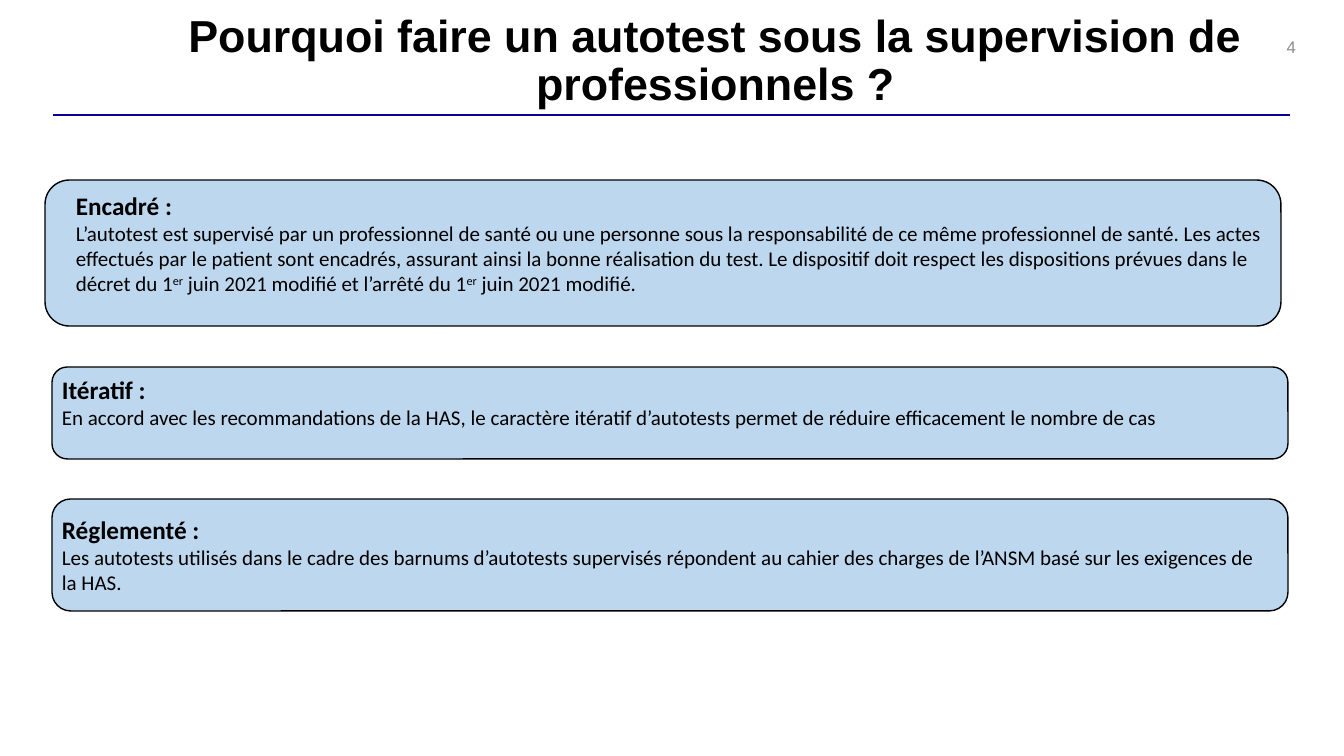
from dataclasses import dataclass

from lxml.etree import SubElement
from pptx import Presentation
from pptx.dml.color import RGBColor
from pptx.enum.shapes import MSO_CONNECTOR, MSO_SHAPE
from pptx.enum.text import MSO_ANCHOR, MSO_AUTO_SIZE, PP_ALIGN
from pptx.oxml.ns import qn
from pptx.util import Pt

EMU_PER_PX = 914400 / 100.8


@dataclass(frozen=True)
class Theme:
    ink: RGBColor = RGBColor(0x00, 0x00, 0x00)
    rule: RGBColor = RGBColor(0x0A, 0x00, 0x91)
    panel: RGBColor = RGBColor(0xBD, 0xD7, 0xEE)
    muted: RGBColor = RGBColor(0x8C, 0x8C, 0x8C)
    heading_font: str = "Arial"
    body_font: str = "Calibri"
    title_size: int = 32
    heading_size: int = 18
    body_size: int = 15
    number_size: int = 12


THEME = Theme()
TITLE = "Pourquoi faire un autotest sous la supervision de professionnels ?"
PANEL_WIDTH, STATEMENT_WIDTH = 1236, 1222

# Panel (left, top, height), statement (shift right, shift down, height), heading,
# and body pieces, which alternate between normal and superscript.
PANELS = [
    ((45, 180, 146), (21, 5, 117), "Encadré :", [
        "L’autotest est supervisé par un professionnel de santé ou une personne sous "
        "la responsabilité de ce même professionnel de santé. Les actes effectués par "
        "le patient sont encadrés, assurant ainsi la bonne réalisation du test. Le "
        "dispositif doit respect les dispositions prévues dans le décret du 1",
        "er", " juin 2021 modifié et l’arrêté du 1", "er", " juin 2021 modifié."]),
    ((52, 367, 92), (0, 2, 67), "Itératif :", [
        "En accord avec les recommandations de la HAS, le caractère itératif "
        "d’autotests permet de réduire efficacement le nombre de cas"]),
    ((52, 499, 112), (0, 10, 92), "Réglementé :", [
        "Les autotests utilisés dans le cadre des barnums d’autotests supervisés "
        "répondent au cahier des charges de l’ANSM basé sur les exigences de la HAS."]),
]


def px(*lengths):
    return [round(length * EMU_PER_PX) for length in lengths]


def apply_format(target, values):
    for name, value in values.items():
        setattr(target, name, value)


def add_run(paragraph, text, size, font=THEME.body_font, color=THEME.ink, bold=False):
    run = paragraph.add_run()
    run.text = text
    apply_format(run.font, {"size": Pt(size), "name": font, "bold": bold})
    run.font.color.rgb = color
    return run


def add_title(slide, box):
    title = slide.shapes.title
    apply_format(title, dict(zip(("left", "top", "width", "height"), px(*box))))
    apply_format(title.text_frame, {"vertical_anchor": MSO_ANCHOR.MIDDLE,
                                    "word_wrap": True,
                                    "auto_size": MSO_AUTO_SIZE.NONE})
    paragraph = title.text_frame.paragraphs[0]
    apply_format(paragraph, {"alignment": PP_ALIGN.CENTER, "line_spacing": 0.9})
    add_run(paragraph, TITLE, THEME.title_size, THEME.heading_font, bold=True)


def add_rule(slide, left, top, width):
    rule = slide.shapes.add_connector(
        MSO_CONNECTOR.STRAIGHT, *px(left, top, left + width, top))
    rule.line.color.rgb = THEME.rule
    rule.line.width = Pt(1.75)
    SubElement(rule._element.spPr, qn("a:effectLst"))


def add_page_number(slide, box, number):
    frame = slide.shapes.add_textbox(*px(*box)).text_frame
    apply_format(frame, {"word_wrap": True, "vertical_anchor": MSO_ANCHOR.MIDDLE})
    paragraph = frame.paragraphs[0]
    paragraph.alignment = PP_ALIGN.RIGHT
    add_run(paragraph, number, THEME.number_size, THEME.heading_font, THEME.muted)


def add_panel(slide, box):
    panel = slide.shapes.add_shape(MSO_SHAPE.ROUNDED_RECTANGLE, *px(*box))
    panel.shadow.inherit = False
    panel.fill.solid()
    panel.fill.fore_color.rgb = THEME.panel
    panel.line.color.rgb = THEME.ink
    panel.line.width = Pt(1)


def add_statement(slide, box, heading, pieces):
    frame = slide.shapes.add_textbox(*px(*box)).text_frame
    apply_format(frame, {"word_wrap": True,
                         "auto_size": MSO_AUTO_SIZE.SHAPE_TO_FIT_TEXT})
    add_run(frame.paragraphs[0], heading, THEME.heading_size, bold=True)
    body = frame.add_paragraph()
    for index, piece in enumerate(pieces):
        run = add_run(body, piece, THEME.body_size)
        if index % 2:
            run.font._element.set("baseline", "30000")


def main():
    deck = Presentation()
    deck.slide_width, deck.slide_height = px(1344, 756)
    slide = deck.slides.add_slide(deck.slide_layouts.get_by_name("Title Only"))
    add_rule(slide, 53, 115, 1237)
    add_page_number(slide, (1004, 27, 302, 40), "4")
    add_title(slide, (133, 29, 1165, 66))
    for (left, top, height), (right, down, text_height), heading, pieces in PANELS:
        add_panel(slide, (left, top, PANEL_WIDTH, height))
        statement_box = (left + right, top + down, STATEMENT_WIDTH, text_height)
        add_statement(slide, statement_box, heading, pieces)
    deck.save("out.pptx")


if __name__ == "__main__":
    main()
